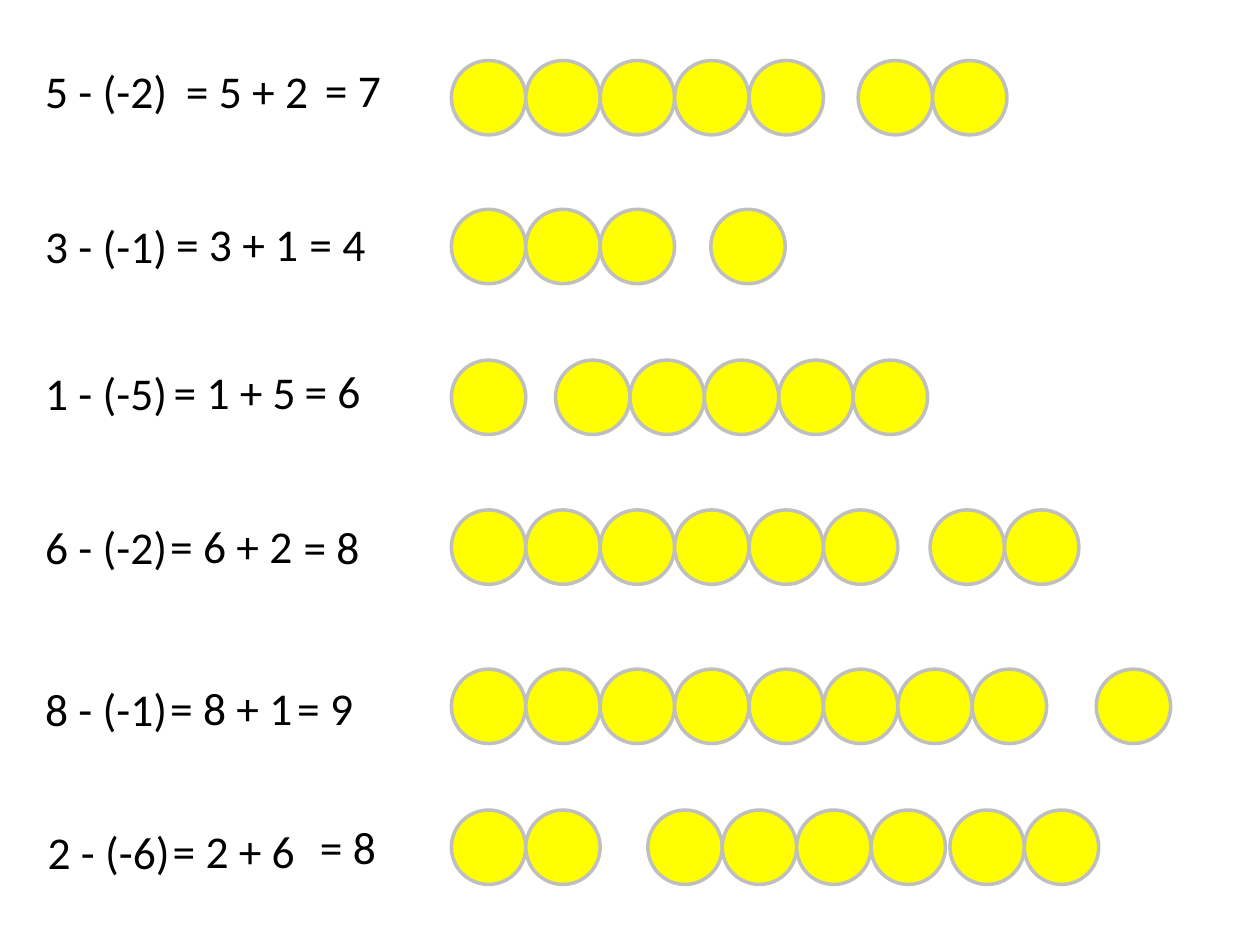
from dataclasses import dataclass

from pptx import Presentation
from pptx.dml.color import RGBColor
from pptx.enum.shapes import MSO_SHAPE as Shape
from pptx.enum.text import MSO_AUTO_SIZE as AutoSize
from pptx.util import Cm, Pt

BLACK = RGBColor(0x00, 0x00, 0x00)
YELLOW = RGBColor(0xFF, 0xFF, 0x00)
GREY = RGBColor(0xBF, 0xBF, 0xBF)

FONT = "Calibri"
COUNTER = 1.5
COUNTERS_LEFT = 9.1


@dataclass
class Exercise:
    minuend: int
    removed: int
    term_places: tuple
    counters_top: float
    added_runs: tuple

    def terms(self):
        return (
            f"{self.minuend} - (-{self.removed})",
            f"= {self.minuend} + {self.removed}",
            f"= {self.minuend + self.removed}",
        )

    def counter_runs(self):
        return ((COUNTERS_LEFT, self.minuend),) + self.added_runs


EXERCISES = (
    Exercise(5, 2, ((0.66, 1.14), (3.5, 1.14), (6.3, 1.12)), 1.22, ((17.3, 2),)),
    Exercise(3, 1, ((0.66, 4.27), (3.3, 4.24), (5.99, 4.24)), 4.22, ((14.33, 1),)),
    Exercise(1, 5, ((0.66, 7.24), (3.25, 7.21), (5.89, 7.19)), 7.26, ((11.2, 5),)),
    Exercise(6, 2, ((0.66, 10.34), (3.18, 10.31), (5.87, 10.34)), 10.28, ((18.75, 2),)),
    Exercise(8, 1, ((0.66, 13.61), (3.18, 13.59), (5.74, 13.59)), 13.49, ((22.1, 1),)),
    Exercise(2, 6, ((0.71, 16.48), (3.23, 16.46), (6.2, 16.38)), 16.33,
             ((13.06, 4), (19.15, 2))),
)


def add_term(slide, wording, left, top):
    term = slide.shapes.add_textbox(Cm(left), Cm(top), Cm(4.2), Cm(1.37))
    frame = term.text_frame
    frame.word_wrap = True
    frame.auto_size = AutoSize.SHAPE_TO_FIT_TEXT
    run = frame.paragraphs[0].add_run()
    run.text = wording
    run.font.name = FONT
    run.font.size = Pt(26)
    run.font.color.rgb = BLACK


def add_counter(row, left, top):
    counter = row.shapes.add_shape(
        Shape.OVAL, Cm(left), Cm(top), Cm(COUNTER), Cm(COUNTER))
    counter.shadow.inherit = False
    counter.fill.solid()
    counter.fill.fore_color.rgb = YELLOW
    counter.line.color.rgb = GREY
    counter.line.width = Pt(2)


def add_counter_row(slide, exercise):
    row = slide.shapes.add_group_shape()
    for left, count in exercise.counter_runs():
        for index in range(count):
            add_counter(row, left + index * COUNTER, exercise.counters_top)


def main():
    deck = Presentation()
    deck.slide_width, deck.slide_height = Cm(25.4), Cm(19.05)
    slide = deck.slides.add_slide(deck.slide_layouts[6])
    for exercise in EXERCISES:
        for wording, (left, top) in zip(exercise.terms(), exercise.term_places):
            add_term(slide, wording, left, top)
        add_counter_row(slide, exercise)
    deck.save("out.pptx")


if __name__ == "__main__":
    main()
